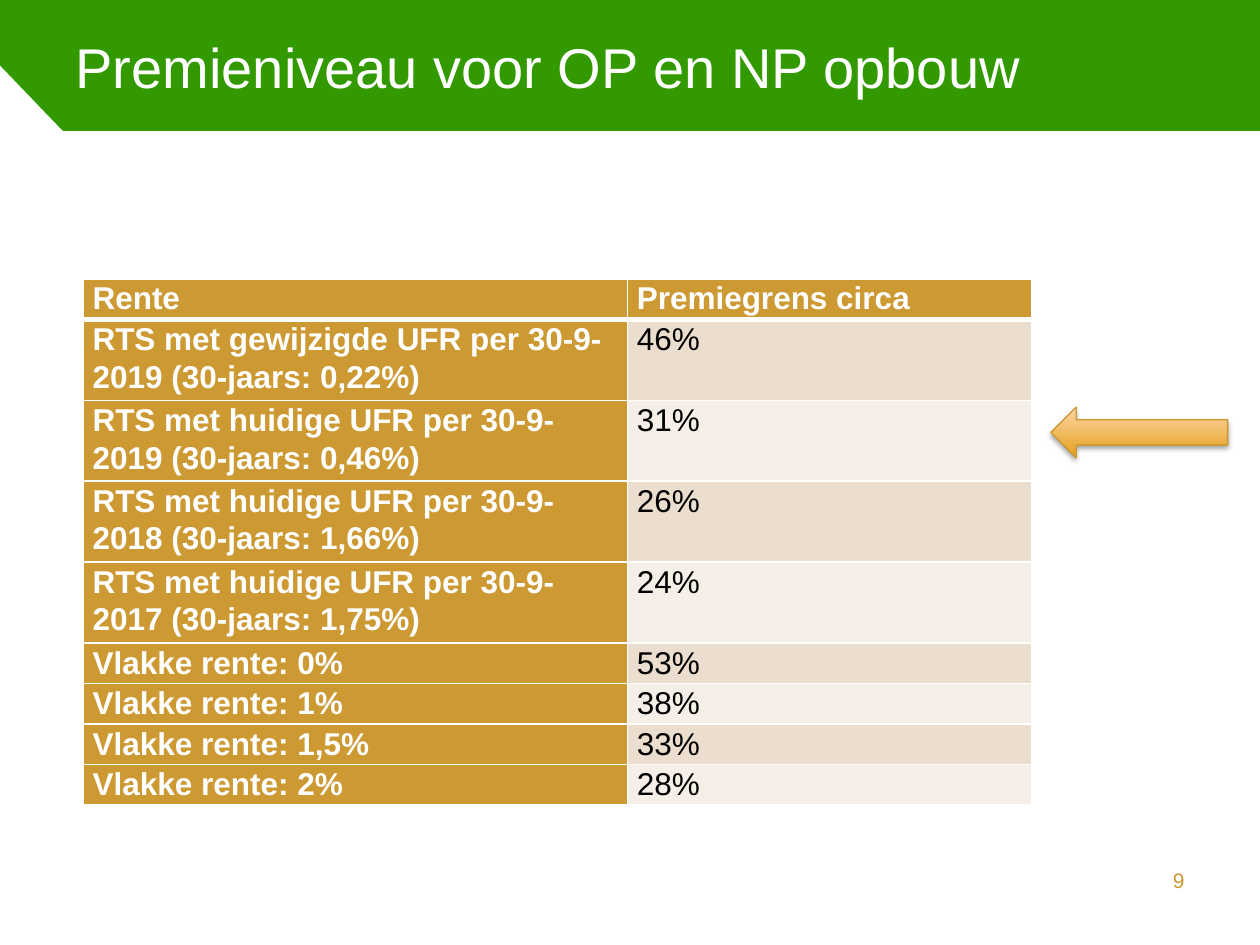
from pptx import Presentation
from pptx.dml.color import RGBColor
from pptx.enum.shapes import MSO_SHAPE as Shape
from pptx.enum.text import MSO_ANCHOR as Anchor, MSO_AUTO_SIZE as AutoSize, PP_ALIGN as Align
from pptx.oxml import parse_xml
from pptx.oxml.ns import nsdecls
from pptx.util import Pt

GREEN, GOLD, WHITE, BLACK = "339900", "CC9933", "FFFFFF", "000000"
BANDS = ["ECDECE", "F6EFE8"]


def color(code):
    return RGBColor.from_string(code)


def write(frame, text, size=18, ink=WHITE, bold=False, align=Align.LEFT, spacing=None):
    para = frame.paragraphs[0]
    para.alignment = align
    para.line_spacing = spacing
    span = para.add_run()
    span.text = text
    span.font.name = "Arial"
    span.font.size = Pt(size)
    span.font.bold = bold
    span.font.color.rgb = color(ink)


deck = Presentation()
deck.slide_width, deck.slide_height = Pt(720), Pt(540)
page = deck.slides.add_slide(deck.slide_layouts[5])
page.background.fill.solid()
page.background.fill.fore_color.rgb = color(GREEN)

# Title in the green band
title = page.shapes.title
title.left, title.top, title.width, title.height = Pt(36), Pt(0), Pt(648), Pt(75)
title.text_frame.vertical_anchor = Anchor.MIDDLE
title.text_frame.auto_size = AutoSize.NONE
write(title.text_frame, "Premieniveau voor OP en NP opbouw", size=32)

# White panel with a cut corner, behind the title
outline = page.shapes.build_freeform(Pt(36), Pt(75))
outline.add_line_segments(
    [(Pt(x), Pt(y)) for x, y in [(0, 37.5), (0, 540), (720, 540), (720, 75)]], close=True)
panel = outline.convert_to_shape()
panel.shadow.inherit = False
panel.fill.solid()
panel.fill.fore_color.rgb = color(WHITE)
panel.line.fill.background()
title.element.addprevious(panel.element)

# Page number
number = page.shapes.add_textbox(Pt(622.8), Pt(492.5), Pt(61.2), Pt(28.8))
number.text_frame.word_wrap = True
write(number.text_frame, "9", size=12, ink=GOLD, align=Align.RIGHT)

# Premium table: label, value, lines of text
rows = [
    ("Rente", "Premiegrens circa", 1),
    ("RTS met gewijzigde UFR per 30-9-2019 (30-jaars: 0,22%)", "46%", 2),
    ("RTS met huidige UFR per 30-9-2019 (30-jaars: 0,46%)", "31%", 2),
    ("RTS met huidige UFR per 30-9-2018 (30-jaars: 1,66%)", "26%", 2),
    ("RTS met huidige UFR per 30-9-2017 (30-jaars: 1,75%)", "24%", 2),
    ("Vlakke rente: 0%", "53%", 1),
    ("Vlakke rente: 1%", "38%", 1),
    ("Vlakke rente: 1,5%", "33%", 1),
    ("Vlakke rente: 2%", "28%", 1),
]
line_height = 21.55
table_height = line_height * sum(row[2] for row in rows)
table = page.shapes.add_table(
    len(rows), 2, Pt(47.5), Pt(159.4), Pt(542), Pt(table_height)).table
table.columns[0].width, table.columns[1].width = Pt(311), Pt(231)

for r, (label, value, lines) in enumerate(rows):
    table.rows[r].height = Pt(line_height * lines)
    for c, text in enumerate((label, value)):
        cell = table.cell(r, c)
        cell.margin_left = cell.margin_right = Pt(5.4)
        cell.margin_top = cell.margin_bottom = Pt(0)
        strong = r == 0 or c == 0
        write(cell.text_frame, text, ink=WHITE if strong else BLACK, bold=strong, spacing=1.07)
        # Thick rule between the header and the first row
        widths = {"L": 1, "R": 1, "T": 3 if r == 1 else 1, "B": 3 if r == 0 else 1}
        for side, width in widths.items():
            cell._tc.get_or_add_tcPr().append(parse_xml(
                f'<a:ln{side} {nsdecls("a")} w="{Pt(width)}"><a:solidFill>'
                f'<a:srgbClr val="{WHITE}"/></a:solidFill></a:ln{side}>'))
        cell.fill.solid()
        cell.fill.fore_color.rgb = color(GOLD if strong else BANDS[(r - 1) % 2])

# Arrow pointing at the current rate
arrow = page.shapes.add_shape(Shape.LEFT_ARROW, Pt(600.5), Pt(232.6), Pt(101), Pt(29))
arrow.fill.gradient()
arrow.fill.gradient_angle = 90
for stop, code in zip(arrow.fill.gradient_stops, ("E3A11C", "FFD5A7")):
    stop.color.rgb = color(code)
for stop, position in zip(arrow.fill.gradient_stops, (0, 1)):
    stop.position = position
arrow.line.color.rgb = color("CB972E")
arrow.line.width = Pt(0.75)
arrow.element.spPr.append(parse_xml(
    f'<a:effectLst {nsdecls("a")}><a:outerShdw blurRad="{Pt(3.1)}" dist="{Pt(1.8)}" '
    f'dir="5400000" rotWithShape="0"><a:srgbClr val="{BLACK}"><a:alpha val="35000"/>'
    '</a:srgbClr></a:outerShdw></a:effectLst>'))

deck.save("out.pptx")
